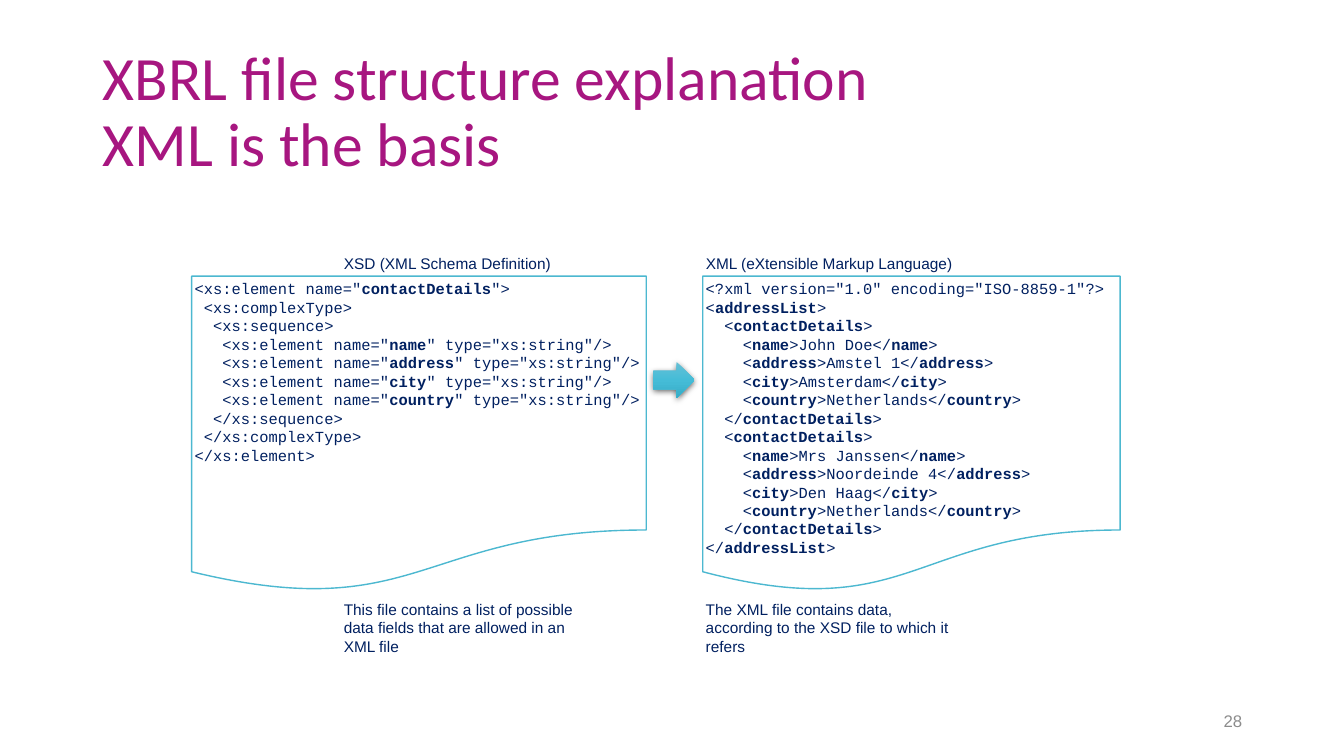
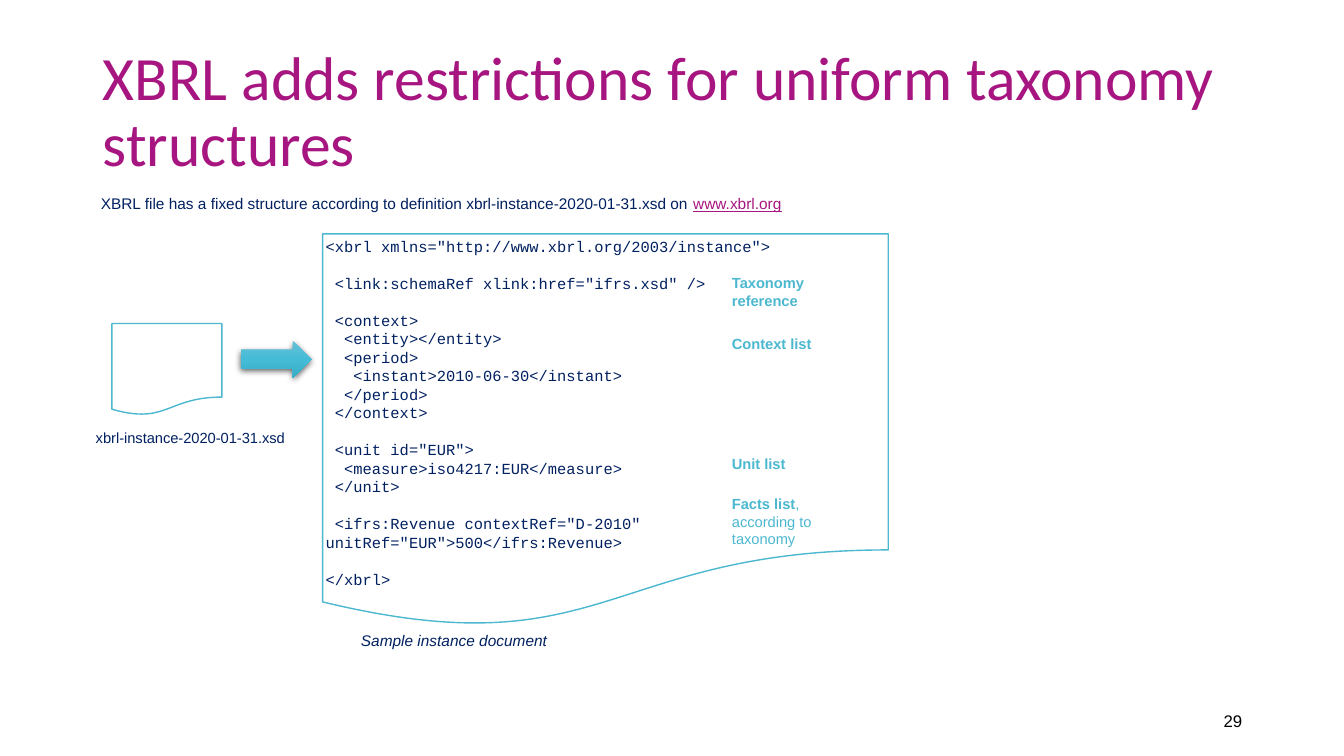
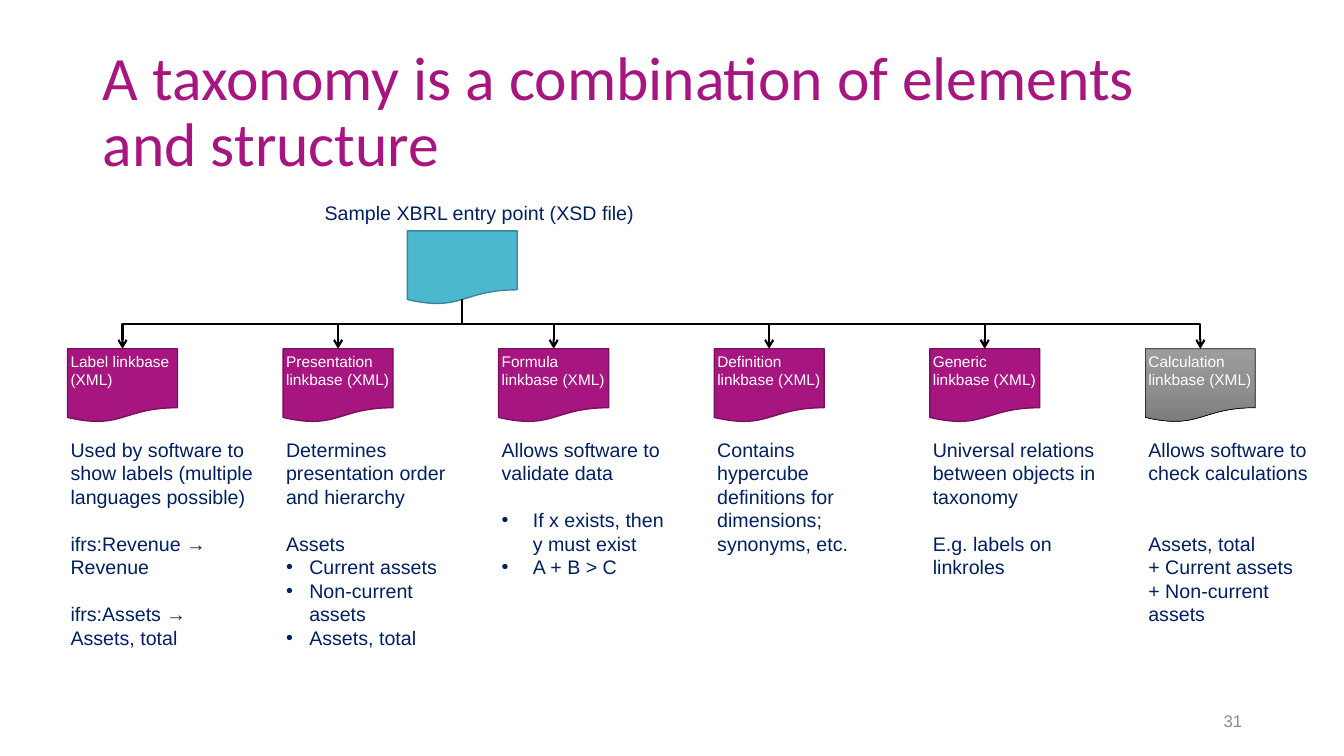
from copy import deepcopy

from lxml.etree import SubElement
from pptx import Presentation
from pptx.dml.color import RGBColor
from pptx.enum.shapes import MSO_CONNECTOR as Connector, MSO_SHAPE as Shape
from pptx.enum.text import MSO_ANCHOR as Anchor, MSO_AUTO_SIZE as AutoSize, PP_ALIGN as Align
from pptx.oxml.ns import qn
from pptx.util import Inches, Pt

WHITE, BLACK, NAVY, GREY = "FFFFFF", "000000", "002060", "8C8C8C"
MAGENTA, DARK_MAGENTA = "A71680", "7C105F"
TEAL, DARK_TEAL = "4CB8D0", "38889A"
TEAL_GRADIENT = ("66C0D6", "45BCD7", "36ACC6")
GREY_GRADIENT = ("9D9D9D", "909090", "7C7C7C")
BODY_FONT, CODE_FONT, TITLE_FONT = "Arial", "Courier New", "Calibri"
LEADING = 1.2

XSD_CODE = """<xs:element name="**contactDetails**">
 <xs:complexType>
  <xs:sequence>
   <xs:element name="**name**" type="xs:string"/>
   <xs:element name="**address**" type="xs:string"/>
   <xs:element name="**city**" type="xs:string"/>
   <xs:element name="**country**" type="xs:string"/>
  </xs:sequence>
 </xs:complexType>
</xs:element>"""

XML_CODE = """<?xml version="1.0" encoding="ISO-8859-1"?>
<**addressList**>
  <**contactDetails**>
    <**name**>John Doe</**name**>
    <**address**>Amstel 1</**address**>
    <**city**>Amsterdam</**city**>
    <**country**>Netherlands</**country**>
  </**contactDetails**>
  <**contactDetails**>
    <**name**>Mrs Janssen</**name**>
    <**address**>Noordeinde 4</**address**>
    <**city**>Den Haag</**city**>
    <**country**>Netherlands</**country**>
  </**contactDetails**>
</**addressList**>"""

INSTANCE_CODE = """<xbrl xmlns="http://www.xbrl.org/2003/instance">

 <link:schemaRef xlink:href="ifrs.xsd" />

 <context>
  <entity></entity>
  <period>
   <instant>2010-06-30</instant>
  </period>
 </context>

 <unit id="EUR">
  <measure>iso4217:EUR</measure>
 </unit>

 <ifrs:Revenue contextRef="D-2010" unitRef="EUR">500</ifrs:Revenue>

</xbrl>"""

# Linkbase name, width of its description, bullet indent, description
LINKBASES = [
    ("Label", 1.87, 0, """Used by software to show labels (multiple languages possible)

ifrs:Revenue → Revenue

ifrs:Assets → Assets, total"""),
    ("Presentation", 1.87, 0.23, """Determines presentation order and hierarchy

Assets
• Current assets
• Non-current assets
• Assets, total"""),
    ("Formula", 1.76, 0.31, """Allows software to validate data

• If x exists, then y must exist
• A + B > C"""),
    ("Definition", 1.5, 0,
     "Contains hypercube definitions for dimensions; synonyms, etc."),
    ("Generic", 1.76, 0, """Universal relations between objects in taxonomy

E.g. labels on linkroles"""),
    ("Calculation", 1.76, 0, """Allows software to check calculations


Assets, total
+ Current assets
+ Non-current assets"""),
]


def rgb(color):
    return RGBColor.from_string(color)


def format_font(font, name=BODY_FONT, size=11, color=NAVY, bold=False, italic=False,
                underline=False):
    font.name, font.size = name, Pt(size)
    font.color.rgb = rgb(color)
    font.bold, font.italic, font.underline = bold, italic, underline


def add_bullet(paragraph, indent):
    properties = paragraph._p.get_or_add_pPr()
    properties.set("marL", str(Inches(indent)))
    properties.set("indent", str(-Inches(indent)))
    SubElement(properties, qn("a:buFont")).set("typeface", BODY_FONT)
    SubElement(properties, qn("a:buChar")).set("char", "•")


def write_text(frame, text, size=11, emphasis=None, indent=0, margin=0.03, **style):
    """Write one paragraph a line; empty lines become space before the next one.

    Text between ** marks takes the emphasis format, which is bold by default.
    """
    frame.word_wrap, frame.auto_size = True, AutoSize.NONE
    frame.vertical_anchor = Anchor.TOP
    frame.margin_left = frame.margin_right = Inches(0.03)
    frame.margin_top = frame.margin_bottom = Inches(margin)
    emphasis = emphasis or {"bold": True}
    line_height = size * LEADING
    paragraph, gap = None, 0
    for line in text.split("\n"):
        if not line:
            gap += line_height
            continue
        paragraph = frame.add_paragraph() if paragraph else frame.paragraphs[0]
        paragraph.alignment = Align.LEFT
        paragraph.line_spacing = Pt(line_height)
        paragraph.space_before = Pt(gap)
        gap = 0
        if line.startswith("• "):
            add_bullet(paragraph, indent)
            line = line[2:]
        for index, part in enumerate(line.split("**")):
            if part:
                run = paragraph.add_run()
                run.text = part
                format_font(run.font, size=size, **{**style, **(emphasis if index % 2 else {})})


def add_label(slide, left, top, width, height, text, **style):
    box = slide.shapes.add_textbox(Inches(left), Inches(top), Inches(width), Inches(height))
    write_text(box.text_frame, text, margin=0.04, **style)


def fill_shape(shape, fill):
    """Fill with one colour, or with a downward gradient of three."""
    if isinstance(fill, str):
        shape.fill.solid()
        shape.fill.fore_color.rgb = rgb(fill)
        return
    shape.fill.gradient()
    shape.fill.gradient_angle = 270
    stops = shape._element.spPr.find(".//" + qn("a:gsLst"))
    middle = deepcopy(stops[0])
    middle.set("pos", "50000")
    stops.insert(1, middle)
    for stop, color in zip(shape.fill.gradient_stops, fill):
        stop.color.rgb = rgb(color)


def add_shape(slide, kind, left, top, width, height, fill, line=None, line_width=1):
    shape = slide.shapes.add_shape(kind, Inches(left), Inches(top), Inches(width), Inches(height))
    fill_shape(shape, fill)
    if line:
        shape.line.color.rgb = rgb(line)
        shape.line.width = Pt(line_width)
    else:
        shape.line.fill.background()
    shape.shadow.inherit = False
    return shape


def add_document(slide, left, top, width, height, text="", fill=WHITE, line=TEAL,
                 line_width=1, **style):
    shape = add_shape(slide, Shape.FLOWCHART_DOCUMENT, left, top, width, height,
                      fill, line, line_width)
    if text:
        write_text(shape.text_frame, text, **style)


def add_block_arrow(slide, left, top, width, height):
    arrow = add_shape(slide, Shape.RIGHT_ARROW, left, top, width, height, TEAL_GRADIENT)
    effects = arrow._element.spPr.find(qn("a:effectLst"))
    shadow = SubElement(effects, qn("a:outerShdw"), blurRad=str(Pt(4.5)), dist=str(Pt(1.5)),
                        dir="5400000", rotWithShape="0")
    color = SubElement(shadow, qn("a:srgbClr"), val=BLACK)
    SubElement(color, qn("a:alpha"), val="63000")


def add_branch(slide, start_x, start_y, end_x, end_y):
    """Draw an elbow arrow that leaves downwards, by turning a sideways one."""
    drop, reach = end_y - start_y, abs(end_x - start_x)
    left = (start_x + end_x - drop) / 2
    top = (start_y + end_y - reach) / 2
    sides = (left, left + drop)
    to_right = end_x > start_x
    begin, end = reversed(sides) if to_right else sides
    branch = slide.shapes.add_connector(Connector.ELBOW, Inches(begin), Inches(top),
                                        Inches(end), Inches(top + reach))
    properties = branch._element.spPr
    properties.find(qn("a:xfrm")).set("rot", str((270 if to_right else 90) * 60000))
    branch.line.color.rgb = rgb(BLACK)
    branch.line.width = Pt(1.5)
    SubElement(properties.find(qn("a:ln")), qn("a:tailEnd"), type="arrow")
    SubElement(properties, qn("a:effectLst"))


def add_slide(presentation, title, number, number_color=GREY):
    slide = presentation.slides.add_slide(presentation.slide_layouts[5])
    heading = slide.shapes.title
    heading.left, heading.top = Inches(0.92), Inches(0.4)
    heading.width, heading.height = Inches(11.5), Inches(1.45)
    frame = heading.text_frame
    frame.text = title
    frame.word_wrap, frame.auto_size = True, AutoSize.NONE
    frame.vertical_anchor = Anchor.MIDDLE
    paragraph = frame.paragraphs[0]
    paragraph.alignment, paragraph.line_spacing = Align.LEFT, 0.9
    format_font(paragraph.font, TITLE_FONT, 44, MAGENTA)

    box = slide.shapes.add_textbox(Inches(9.42), Inches(6.95), Inches(3), Inches(0.4))
    box.text_frame.vertical_anchor = Anchor.MIDDLE
    paragraph = box.text_frame.paragraphs[0]
    paragraph.text = str(number)
    paragraph.alignment = Align.RIGHT
    format_font(paragraph.font, size=12, color=number_color)
    return slide


def build_xml_basis(presentation):
    slide = add_slide(presentation, "XBRL file structure explanation\vXML is the basis", 28)
    files = [
        (1.9, 4.51, 3.38, "XSD (XML Schema Definition)", XSD_CODE,
         "This file contains a list of possible data fields that are allowed in an XML file"),
        (6.97, 4.14, 6.97, "XML (eXtensible Markup Language)", XML_CODE,
         "The XML file contains data, according to the XSD file to which it refers"),
    ]
    for left, width, label_left, name, code, caption in files:
        add_document(slide, left, 2.74, width, 3.14, code, name=CODE_FONT)
        add_label(slide, label_left, 2.48, 2.72, 0.26, name)
        add_label(slide, label_left, 5.91, 2.53, 0.63, caption)
    add_block_arrow(slide, 6.48, 3.59, 0.41, 0.36)


def build_instance(presentation):
    slide = add_slide(presentation, "XBRL adds restrictions for uniform taxonomy structures",
                      29, BLACK)
    add_label(slide, 0.97, 1.89, 7, 0.26,
              "XBRL file has a fixed structure according to definition "
              "xbrl-instance-2020-01-31.xsd on **www.xbrl.org**",
              emphasis={"color": MAGENTA, "underline": True})
    add_document(slide, 1.11, 3.21, 1.09, 0.91)
    add_label(slide, 0.92, 4.21, 2, 0.25, "xbrl-instance-2020-01-31.xsd", size=10.5)
    add_block_arrow(slide, 2.39, 3.38, 0.7, 0.37)
    add_document(slide, 3.2, 2.32, 5.61, 3.91, INSTANCE_CODE, name=CODE_FONT)
    add_label(slide, 3.55, 6.22, 2, 0.26, "Sample instance document", italic=True)
    parts = [
        (2.68, 0.43, "**Taxonomy reference**"),
        (3.28, 0.25, "**Context list**"),
        (4.47, 0.25, "**Unit list**"),
        (4.87, 0.61, "**Facts list**, according to taxonomy"),
    ]
    for top, height, text in parts:
        add_label(slide, 7.23, top, 0.98, height, text, size=10.5, color=TEAL)


def build_taxonomy(presentation):
    slide = add_slide(presentation, "A taxonomy is a combination of elements and structure", 31)
    width, height, row_top = 1.09, 0.73, 3.46
    first_left, last_left = 0.67, 11.36
    column_step = (last_left - first_left) / (len(LINKBASES) - 1)
    entry_left = 4.04
    add_label(slide, 3.19, 1.95, 3.2, 0.31, "Sample XBRL entry point (XSD file)", size=14)
    add_document(slide, entry_left, 2.29, width, height, fill=TEAL, line=DARK_TEAL)
    for column, (name, text_width, indent, description) in enumerate(LINKBASES):
        left = first_left + column * column_step
        look = {"fill": MAGENTA, "line": DARK_MAGENTA}
        if name == "Calculation":
            look = {"fill": GREY_GRADIENT, "line": BLACK, "line_width": 0.5}
        add_document(slide, left, row_top, width, height, f"{name} linkbase (XML)",
                     color=WHITE, **look)
        add_branch(slide, entry_left + width / 2, 2.97, left + width / 2, row_top)
        add_label(slide, left, 4.3, text_width, 2.2, description, size=14, indent=indent)


def main():
    presentation = Presentation()
    presentation.slide_width, presentation.slide_height = Inches(13.33), Inches(7.5)
    build_xml_basis(presentation)
    build_instance(presentation)
    build_taxonomy(presentation)
    presentation.save("out.pptx")


if __name__ == "__main__":
    main()
